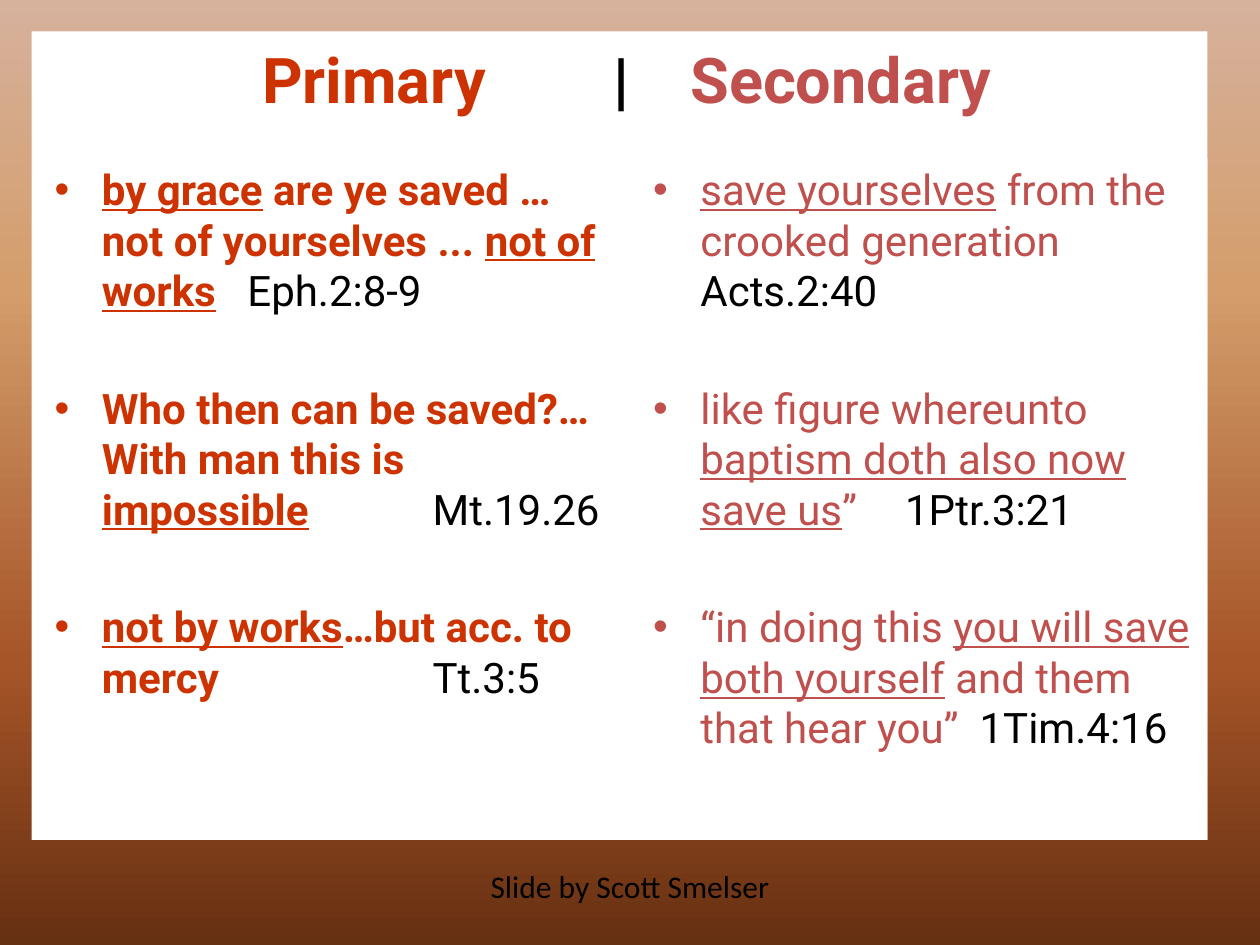
from dataclasses import dataclass

from lxml.etree import SubElement
from pptx import Presentation
from pptx.dml.color import RGBColor
from pptx.enum.shapes import MSO_SHAPE
from pptx.enum.text import MSO_ANCHOR, MSO_AUTO_SIZE, PP_ALIGN
from pptx.oxml.ns import qn
from pptx.util import Inches, Pt

WHITE = RGBColor(0xFF, 0xFF, 0xFF)
BLACK = RGBColor(0x00, 0x00, 0x00)
RED = RGBColor(0xCC, 0x33, 0x00)
ROSE = RGBColor(0xC0, 0x50, 0x4D)
BACKGROUND_STOPS = {
    0: RGBColor(0xD6, 0xB1, 0x9C),
    30: RGBColor(0xD4, 0x9E, 0x6C),
    70: RGBColor(0xA6, 0x55, 0x28),
    100: RGBColor(0x66, 0x30, 0x12),
}
WIDTH, HEIGHT = Inches(10), Inches(7.5)
GRID_COLUMNS, GRID_ROWS = 120, 90
VERSE_GAP = Pt(38.5)


@dataclass(frozen=True)
class Box:
    """A place on the slide, in grid columns and rows."""
    column: int
    row: int
    columns: int
    rows: int

    def lengths(self) -> tuple:
        cell_width, cell_height = WIDTH // GRID_COLUMNS, HEIGHT // GRID_ROWS
        return (self.column * cell_width, self.row * cell_height,
                self.columns * cell_width, self.rows * cell_height)


@dataclass(frozen=True)
class Verse:
    """Phrases as (text, underlined), then the reference and its tab stop."""
    phrases: tuple
    reference: str
    tab: float = 0


@dataclass(frozen=True)
class VerseList:
    box: Box
    color: RGBColor
    bold: bool
    verses: tuple


PANEL = Box(3, 3, 112, 77)
TITLE = Box(9, 3, 102, 9)
CREDIT = Box(45, 82, 30, 5)
TITLE_START = 1.33
TITLE_TABS = (2.79, 3.4)
VERSE_LISTS = (
    VerseList(Box(4, 15, 55, 65), RED, True, (
        Verse((("by grace", True), (" are ye saved … not of yourselves ... ", False),
               ("not of works", True), ("\t", False)), "Eph.2:8-9", 1.53),
        Verse((("Who then can be saved?… With man this is ", False),
               ("impossible", True), ("\t", False)), "Mt.19.26", 3),
        Verse((("not by works", True), ("…but acc. to mercy\t", False)), "Tt.3:5", 3),
    )),
    VerseList(Box(61, 15, 54, 65), ROSE, False, (
        Verse((("save yourselves", True), (" from the crooked generation\v", False)),
              "Acts.2:40"),
        Verse((("like figure whereunto ", False),
               ("baptism doth also now save us", True), ("”\t", False)), "1Ptr.3:21", 2),
        Verse((("“in doing this ", False), ("you will save both yourself", True),
               (" and them that hear you”  ", False)), "1Tim.4:16"),
    )),
)


def set_all(target, values: dict) -> None:
    for name, value in values.items():
        setattr(target, name, value)


def place(shape, box: Box) -> None:
    set_all(shape, dict(zip(("left", "top", "width", "height"), box.lengths())))


def fill_solid(shape, color: RGBColor) -> None:
    shape.fill.solid()
    shape.fill.fore_color.rgb = color


def add_text(paragraph, text: str, color: RGBColor, **font_values) -> None:
    """Add text in one format; a vertical tab in it becomes a line break."""
    for index, part in enumerate(text.split("\v")):
        if index:
            paragraph.add_line_break()
        if part:
            run = paragraph.add_run()
            run.text = part
            set_all(run.font, {"name": "Roboto", **font_values})
            run.font.color.rgb = color


def set_tabs(paragraph, positions: tuple) -> None:
    tab_list = SubElement(paragraph._p.get_or_add_pPr(), qn("a:tabLst"))
    for position in positions:
        SubElement(tab_list, qn("a:tab"), pos=str(Inches(position)), algn="l")


def paint_background(slide) -> None:
    fill = slide.background.fill
    fill.gradient()
    fill.gradient_angle = 270
    stop_list = next(slide.element.iter(qn("a:gsLst")))
    for stop in list(stop_list):
        stop_list.remove(stop)
    for percent, color in BACKGROUND_STOPS.items():
        stop = SubElement(stop_list, qn("a:gs"), pos=str(percent * 1000))
        SubElement(stop, qn("a:srgbClr"), val=str(color))


def add_panel(slide) -> None:
    """Add the white panel behind the placeholders."""
    panel = slide.shapes.add_shape(MSO_SHAPE.RECTANGLE, *PANEL.lengths())
    panel.shadow.inherit = False
    fill_solid(panel, WHITE)
    panel.line.fill.background()
    slide.shapes._spTree.insert(2, panel._element)


def write_title(title) -> None:
    place(title, TITLE)
    set_all(title.text_frame, {
        "vertical_anchor": MSO_ANCHOR.MIDDLE, "auto_size": MSO_AUTO_SIZE.NONE,
        "margin_left": Inches(TITLE_START)})
    paragraph = title.text_frame.paragraphs[0]
    paragraph.alignment = PP_ALIGN.LEFT
    set_tabs(paragraph, TITLE_TABS)
    for text, color in (("Primary", RED), ("\t|\t", BLACK), ("Secondary", ROSE)):
        add_text(paragraph, text, color, size=Pt(36), bold=True)


def write_verses(body, verse_list: VerseList) -> None:
    place(body, verse_list.box)
    fill_solid(body, WHITE)
    frame = body.text_frame
    frame.auto_size = MSO_AUTO_SIZE.NONE
    for index, verse in enumerate(verse_list.verses):
        paragraph = frame.add_paragraph() if index else frame.paragraphs[0]
        paragraph.space_before = VERSE_GAP if index else Pt(0)
        if verse.tab:
            set_tabs(paragraph, (verse.tab,))
        for text, underlined in verse.phrases:
            add_text(paragraph, text, verse_list.color, size=Pt(24),
                     bold=verse_list.bold, underline=underlined)
        add_text(paragraph, verse.reference, BLACK, size=Pt(24), bold=False)


def add_credit(slide) -> None:
    frame = slide.shapes.add_textbox(*CREDIT.lengths()).text_frame
    set_all(frame, {"word_wrap": True, "auto_size": MSO_AUTO_SIZE.SHAPE_TO_FIT_TEXT})
    paragraph = frame.paragraphs[0]
    paragraph.alignment = PP_ALIGN.CENTER
    add_text(paragraph, "Slide by Scott Smelser", BLACK, name="Calibri", size=Pt(18))


def main() -> None:
    presentation = Presentation()
    set_all(presentation, {"slide_width": WIDTH, "slide_height": HEIGHT})
    slide = presentation.slides.add_slide(
        presentation.slide_layouts.get_by_name("Two Content"))
    paint_background(slide)
    add_panel(slide)
    write_title(slide.shapes.title)
    for index, verse_list in enumerate(VERSE_LISTS, start=1):
        write_verses(slide.placeholders[index], verse_list)
    add_credit(slide)
    presentation.save("out.pptx")


if __name__ == "__main__":
    main()
